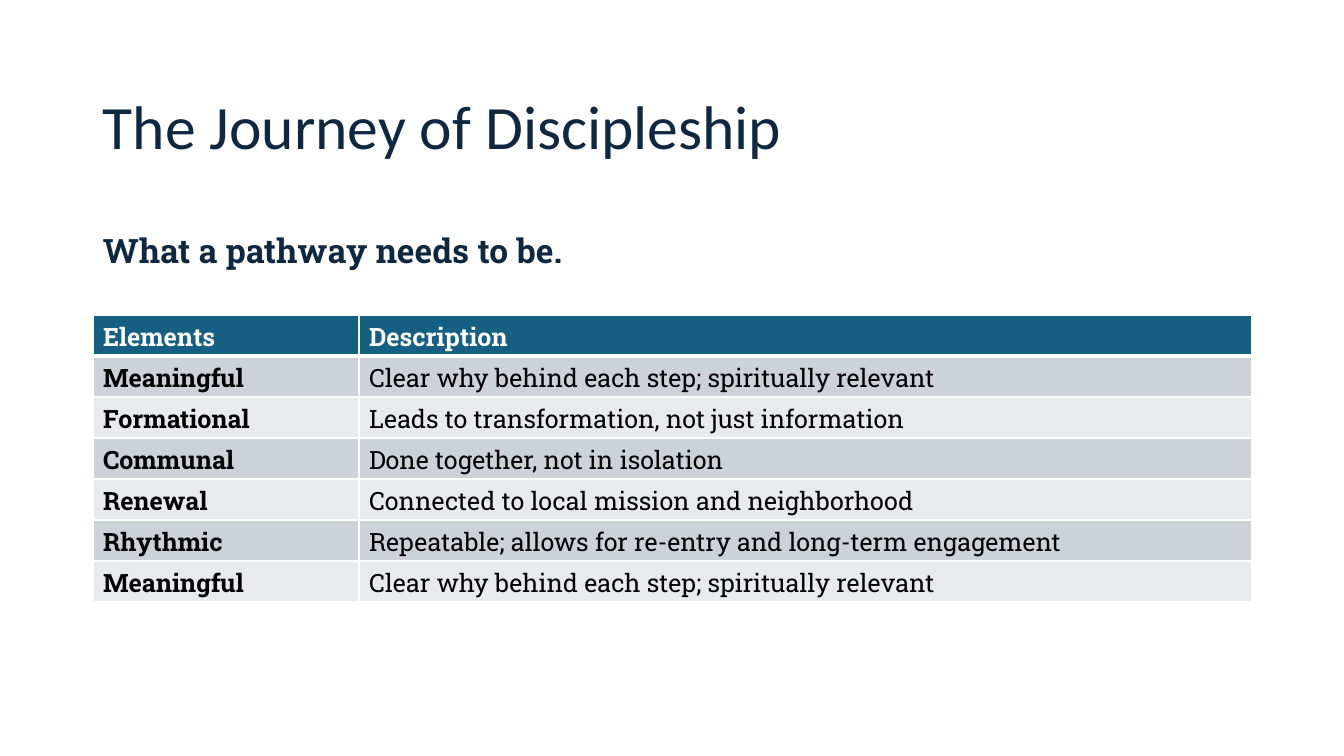
import pptx
import pptx.util
import pptx.dml.color
import pptx.enum.text
import pptx.oxml

RGB = pptx.dml.color.RGBColor
NAVY = RGB(0x0E, 0x28, 0x41)
TEAL = RGB(0x15, 0x60, 0x82)
DARK = RGB(0xCC, 0xD2, 0xD8)
PALE = RGB(0xE8, 0xEA, 0xED)
WHITE = RGB(0xFF, 0xFF, 0xFF)
BLACK = RGB(0, 0, 0)
SLAB = "Roboto Slab"
ANCHOR = pptx.enum.text.MSO_ANCHOR
NS = "http://schemas.openxmlformats.org/drawingml/2006/main"


def px(n):
    return pptx.util.Emu(round(n * 914400 / 100.8))


def write(frame, text, size=18, font=SLAB, color=BLACK, bold=False, space=None):
    para = frame.paragraphs[0]
    para.line_spacing = space
    run = para.add_run()
    run.text = text
    run.font.size = pptx.util.Pt(size)
    run.font.name = font
    run.font.bold = bold
    run.font.color.rgb = color


deck = pptx.Presentation()
deck.slide_width, deck.slide_height = px(1344), px(756)
slide = deck.slides.add_slide(deck.slide_layouts[6])

heads = [
    ("The Journey of Discipleship", 73, 113, ANCHOR.MIDDLE, 44, "Calibri", False),
    ("What a pathway needs to be.", 186, 90, ANCHOR.BOTTOM, 24, SLAB, True),
]
for text, top, high, anchor, size, font, bold in heads:
    box = slide.shapes.add_textbox(px(93), px(top), px(1159), px(high))
    box.text_frame.word_wrap = True
    box.text_frame.vertical_anchor = anchor
    write(box.text_frame, text, size=size, font=font, color=NAVY, bold=bold, space=0.9)

rows = [
    ("Elements", "Description"),
    ("Meaningful", "Clear why behind each step; spiritually relevant"),
    ("Formational", "Leads to transformation, not just information"),
    ("Communal", "Done together, not in isolation"),
    ("Renewal", "Connected to local mission and neighborhood"),
    ("Rhythmic", "Repeatable; allows for re-entry and long-term engagement"),
    ("Meaningful", "Clear why behind each step; spiritually relevant"),
]
high = 41
table = slide.shapes.add_table(
    len(rows), 2, px(93), px(315), px(1159), px(high * len(rows))
).table
table.columns[0].width, table.columns[1].width = px(266), px(893)

for r, row in enumerate(rows):
    table.rows[r].height = px(high)
    head = r == 0
    for c, text in enumerate(row):
        cell = table.cell(r, c)
        props = cell._tc.get_or_add_tcPr()
        for side in "LRTB":
            thick = (r, side) in [(0, "B"), (1, "T")]
            props.append(pptx.oxml.parse_xml(
                f'<a:ln{side} xmlns:a="{NS}" w="{38100 if thick else 12700}">'
                f'<a:solidFill><a:srgbClr val="{WHITE}"/></a:solidFill></a:ln{side}>'
            ))
        cell.fill.solid()
        cell.fill.fore_color.rgb = TEAL if head else DARK if r % 2 else PALE
        cell.vertical_anchor = ANCHOR.TOP if head else ANCHOR.MIDDLE
        write(cell.text_frame, text, color=WHITE if head else BLACK, bold=head or c == 0)

deck.save("out.pptx")
